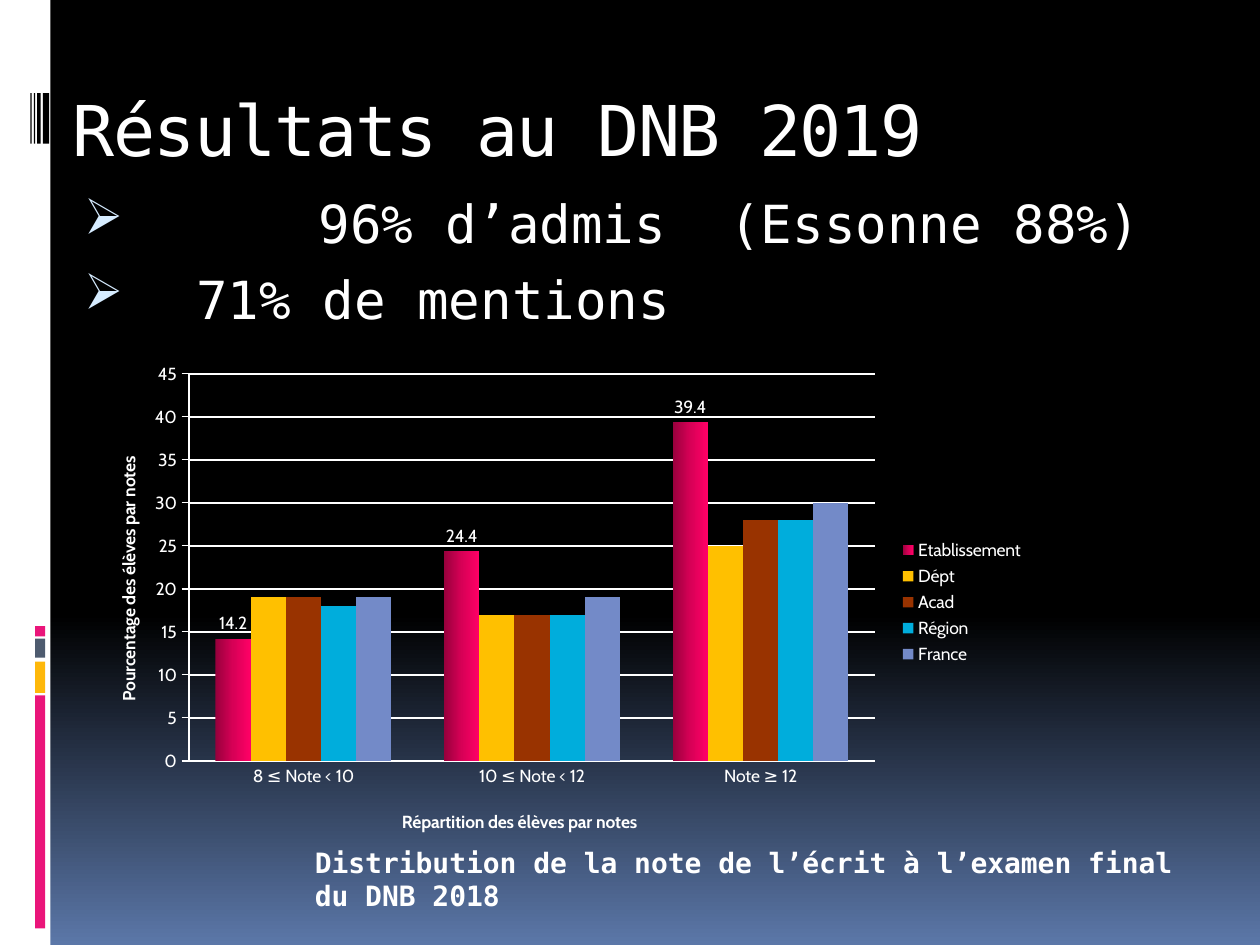
from dataclasses import dataclass

from lxml import etree
from pptx import Presentation
from pptx.chart.data import CategoryChartData
from pptx.dml.color import RGBColor
from pptx.enum.chart import XL_CHART_TYPE, XL_LABEL_POSITION, XL_LEGEND_POSITION, XL_TICK_MARK
from pptx.enum.shapes import MSO_SHAPE
from pptx.enum.text import MSO_ANCHOR, PP_ALIGN
from pptx.oxml.ns import qn
from pptx.util import Pt

RECT = MSO_SHAPE.RECTANGLE
COLUMNS = XL_CHART_TYPE.COLUMN_CLUSTERED
OUTSIDE_END = XL_LABEL_POSITION.OUTSIDE_END
RIGHT = XL_LEGEND_POSITION.RIGHT
TICK_NONE, TICK_OUT = XL_TICK_MARK.NONE, XL_TICK_MARK.OUTSIDE
TOP, LEFT = MSO_ANCHOR.TOP, PP_ALIGN.LEFT


@dataclass(frozen=True)
class Theme:
    mono: str = "DejaVu Sans Mono"
    sans: str = "Cabin"
    white: str = "FFFFFF"
    black: str = "000000"
    pink: str = "EA157A"
    amber: str = "FEB80A"
    slate: str = "4E5B6F"
    bullet: str = "D6ECFF"
    sky: tuple = ((0, "000000"), (65, "000000"), (100, "5B77A8"))
    school: tuple = ((0, "97003C"), (50, "D70056"), (100, "FF0066"))
    peers: tuple = ("FFC000", "993300", "00ADDC", "738AC8")
    title: float = 40
    body: float = 30
    caption: float = 16
    chart: float = 10


def rgb(value):
    return RGBColor.from_string(value)


def set_font(font, name, size, color, bold=False):
    font.name, font.size, font.bold = name, Pt(size), bold
    font.color.rgb = rgb(color)


def set_text(p, text, *, spacing=None, **style):
    p.alignment = LEFT
    r = p.add_run()
    r.text = text
    set_font(r.font, **style)
    if spacing is not None:
        r.font._element.set("spc", str(spacing * 100))


def set_gradient(fill, element, stops, angle):
    fill.gradient()
    fill.gradient_angle = -angle % 360
    gs_list = next(element.iter(qn("a:gsLst")))
    for gs in list(gs_list):
        gs_list.remove(gs)
    for pos, color in stops:
        gs = etree.SubElement(gs_list, qn("a:gs"), pos=str(pos * 1000))
        etree.SubElement(gs, qn("a:srgbClr"), val=color)


def set_layout(element, index, inner=False, **position):
    for old in element.findall(qn("c:layout")):
        element.remove(old)
    layout = etree.Element(qn("c:layout"))
    manual = etree.SubElement(layout, qn("c:manualLayout"))
    if inner:
        etree.SubElement(manual, qn("c:layoutTarget"), val="inner")
    for key in ("x", "y"):
        etree.SubElement(manual, qn(f"c:{key}Mode"), val="edge")
    for key, value in position.items():
        etree.SubElement(manual, qn(f"c:{key}"), val=str(value))
    element.insert(index, layout)


class SlideBuilder:
    """Hold the theme and the current slide, and add each kind of element."""

    def __init__(self, prs, theme):
        self.theme = theme
        self.s = prs.slides.add_slide(prs.slide_layouts[5])

    def background(self):
        set_gradient(self.s.background.fill, self.s._element, self.theme.sky, 90)

    def rect(self, left, top, width, height, color):
        sp = self.s.shapes.add_shape(RECT, Pt(left), Pt(top), Pt(width), Pt(height))
        sp.shadow.inherit = False
        sp.fill.solid()
        sp.fill.fore_color.rgb = rgb(color)
        sp.line.fill.background()

    def title(self, text, left, top, width, height):
        t, sp = self.theme, self.s.shapes.title
        sp.left, sp.top, sp.width, sp.height = Pt(left), Pt(top), Pt(width), Pt(height)
        tf = sp.text_frame
        tf.vertical_anchor = TOP
        tf.margin_left, tf.margin_top = Pt(5), Pt(6)
        set_text(tf.paragraphs[0], text, spacing=-1, name=t.mono, size=t.title, color=t.white)

    def text_box(self, left, top, width, height):
        tf = self.s.shapes.add_textbox(Pt(left), Pt(top), Pt(width), Pt(height)).text_frame
        tf.word_wrap = True
        return tf

    def bullets(self, items, *box):
        t, tf = self.theme, self.text_box(*box)
        for i, (text, margin) in enumerate(items):
            p = tf.add_paragraph() if i else tf.paragraphs[0]
            p.space_before = Pt(7 if i else 0)
            set_text(p, text, name=t.mono, size=t.body, color=t.white)
            ppr = p._p.get_or_add_pPr()
            ppr.set("marL", str(Pt(margin)))
            ppr.set("indent", str(Pt(5 - margin)))
            color = etree.SubElement(ppr, qn("a:buClr"))
            etree.SubElement(color, qn("a:srgbClr"), val=t.bullet)
            etree.SubElement(ppr, qn("a:buSzPct"), val="95000")
            etree.SubElement(ppr, qn("a:buChar"), char="➢")

    def caption(self, text, *box):
        t, p = self.theme, self.text_box(*box).paragraphs[0]
        set_text(p, text, name=t.mono, size=t.caption, color=t.white, bold=True)

    def axis(self, axis, title, tick, x, y):
        t = self.theme
        axis.major_tick_mark, axis.minor_tick_mark = tick, TICK_NONE
        axis.format.line.color.rgb = rgb(t.white)
        axis.format.line.width = Pt(0.75)
        p = axis.axis_title.text_frame.paragraphs[0]
        set_text(p, title, name=t.sans, size=t.chart, color=t.white, bold=True)
        set_layout(axis.axis_title._element, 1, x=x, y=y)

    def chart(self, categories, series, left, top, width, height):
        t, data = self.theme, CategoryChartData()
        data.categories = categories
        for name, values in series.items():
            data.add_series(name, values)
        chart = self.s.shapes.add_chart(
            COLUMNS, Pt(left), Pt(top), Pt(width), Pt(height), data).chart
        set_font(chart.font, t.sans, t.chart, t.white)
        chart.has_title = False
        chart.has_legend = True
        chart.legend.position = RIGHT
        chart.legend.include_in_layout = False

        self.axis(chart.category_axis, "Répartition des élèves par notes", TICK_NONE, 0.33, 0.91)
        values_axis = chart.value_axis
        self.axis(values_axis, "Pourcentage des élèves par notes", TICK_OUT, 0.03, 0.2)
        values_axis.minimum_scale, values_axis.maximum_scale = 0, 45
        values_axis.major_unit = 5
        grid = values_axis.major_gridlines.format.line
        grid.color.rgb, grid.width = rgb(t.white), Pt(1)

        plot = chart.plots[0]
        plot.gap_width, plot.overlap, plot.vary_by_categories = 150, 0, False
        school, *peers = plot.series
        set_gradient(school.format.fill, school._element, t.school, 0)
        labels = school.data_labels
        labels.show_value, labels.position = True, OUTSIDE_END
        set_font(labels.font, t.sans, t.chart, t.white)
        for ser, color in zip(peers, t.peers):
            ser.format.fill.solid()
            ser.format.fill.fore_color.rgb = rgb(color)
        area = next(chart._chartSpace.iter(qn("c:plotArea")))
        set_layout(area, 0, inner=True, x=0.11, y=0.04, w=0.72, h=0.78)


def main():
    prs = Presentation()
    prs.slide_width, prs.slide_height = Pt(720), Pt(540)
    theme = Theme()
    slide = SlideBuilder(prs, theme)
    slide.background()
    slide.rect(0, 0, 28.8, 540, theme.white)
    for top, height, color in ((397.4, 133.2, theme.pink), (378, 18, theme.amber),
                               (365, 10.8, theme.slate), (357.8, 5.8, theme.pink)):
        slide.rect(20, top, 5.8, height, color)
    for left, width in ((24.5, 3.6), (21.2, 2), (19.4, 0.7), (17.4, 0.7)):
        slide.rect(left, 53.3, width, 28.8, theme.black)

    slide.title("Résultats au DNB 2019", 36.7, 43.2, 647.3, 67.7)
    slide.bullets((("96% d’admis  (Essonne 88%)", 139), ("71% de mentions", 69)),
                  36, 105.8, 648, 90)
    slide.chart(
        ("8 ≤ Note < 10", "10 ≤ Note < 12", "Note ≥ 12"),
        {"Etablissement": (14.2, 24.4, 39.4), "Dépt": (19, 17, 25), "Acad": (19, 17, 28),
         "Région": (18, 17, 28), "France": (19, 19, 30)},
        48.2, 202.3, 544.3, 283.7)
    slide.caption("Distribution de la note de l’écrit à l’examen final du DNB 2018",
                  172.8, 479.5, 522, 46)
    prs.save("out.pptx")


if __name__ == "__main__":
    main()
